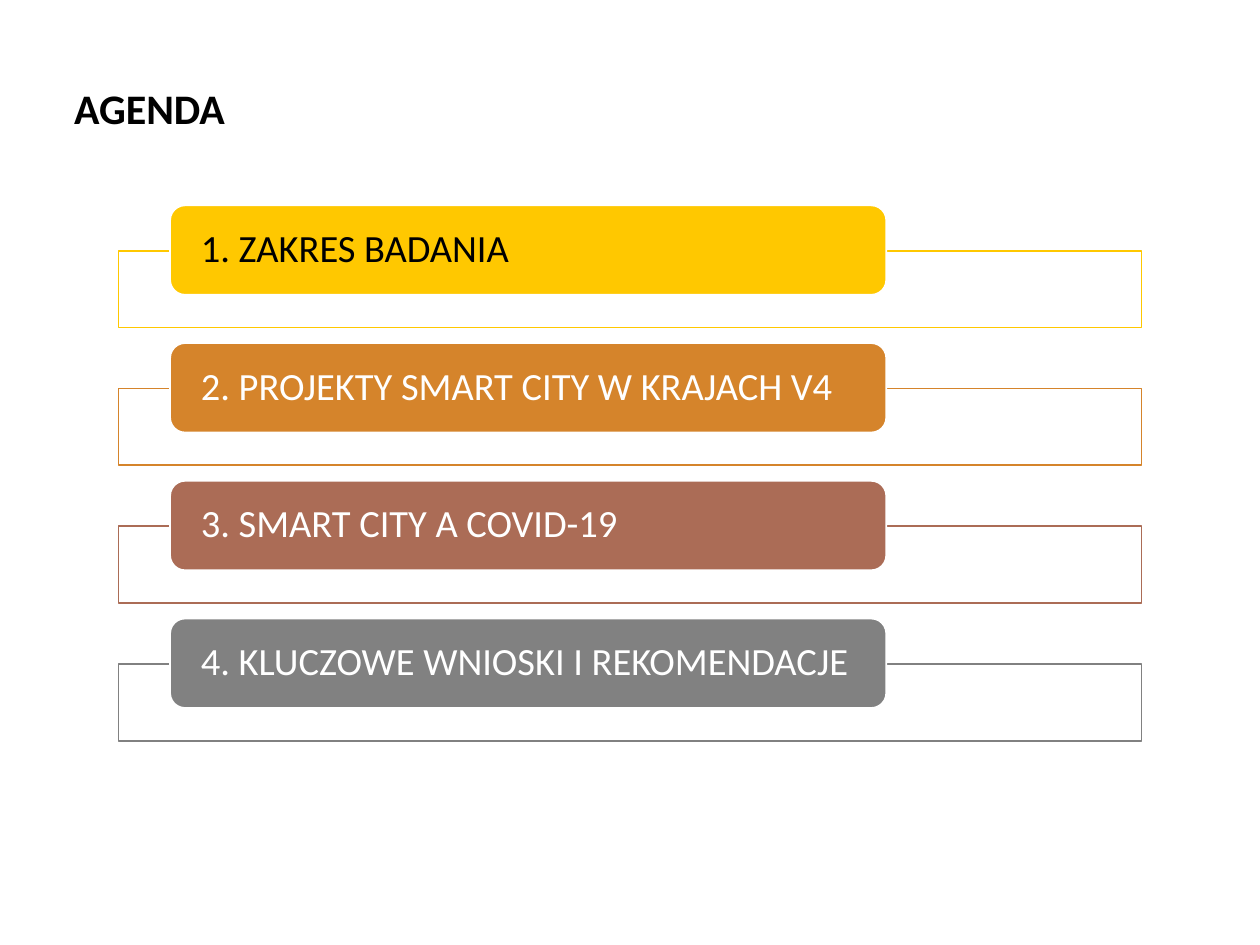
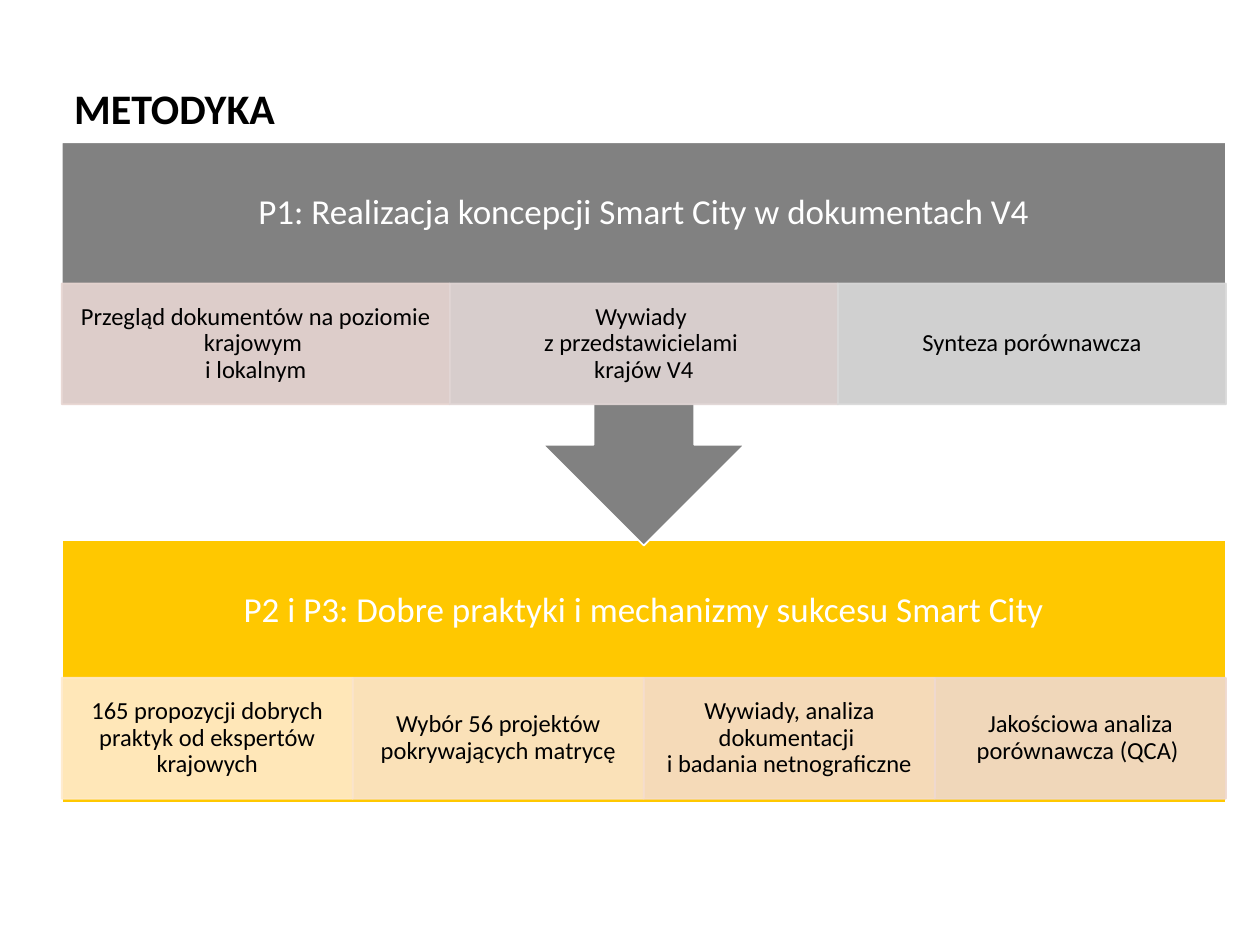
from lxml.etree import SubElement
from pptx import Presentation
from pptx.dml.color import RGBColor
from pptx.enum.shapes import MSO_SHAPE
from pptx.enum.text import MSO_ANCHOR, PP_ALIGN
from pptx.oxml.ns import qn
from pptx.util import Inches, Pt

FONT = "Calibri"
BLACK = RGBColor(0, 0, 0)
WHITE = RGBColor(255, 255, 255)
GOLD = RGBColor(0xFF, 0xC8, 0x00)
AMBER = RGBColor(0xD5, 0x84, 0x2B)
CLAY = RGBColor(0xAB, 0x6C, 0x56)
GRAY = RGBColor(0x81, 0x81, 0x81)
CREAM = RGBColor(0xFF, 0xEB, 0xCC)
SAND = RGBColor(0xFA, 0xE4, 0xCC)
PEACH = RGBColor(0xF5, 0xDD, 0xCD)
BLUSH = RGBColor(0xEF, 0xD9, 0xCF)
ROSE = RGBColor(0xE8, 0xD6, 0xD2)
MAUVE = RGBColor(0xE1, 0xD6, 0xD5)
SILVER = RGBColor(0xD9, 0xD9, 0xD9)

LEFT, WIDTH = 0.49, 9.24

TOPICS = [
    ("1. ZAKRES BADANIA", GOLD, BLACK),
    ("2. PROJEKTY SMART CITY W KRAJACH V4", AMBER, WHITE),
    ("3. SMART CITY A COVID-19", CLAY, WHITE),
    ("4. KLUCZOWE WNIOSKI I REKOMENDACJE", GRAY, WHITE),
]
REVIEW = [
    ("Przegląd dokumentów na poziomie krajowym \ni lokalnym", ROSE),
    ("Wywiady \nz przedstawicielami \nkrajów V4", MAUVE),
    ("Synteza porównawcza", SILVER),
]
CASES = [
    ("165 propozycji dobrych praktyk od ekspertów krajowych", CREAM),
    ("Wybór 56 projektów pokrywających matrycę", SAND),
    ("Wywiady, analiza dokumentacji \ni badania netnograficzne", PEACH),
    ("Jakościowa analiza porównawcza (QCA) ", BLUSH),
]


def write(shape, text, size, color=BLACK, bold=False, align=PP_ALIGN.LEFT,
          anchor=MSO_ANCHOR.MIDDLE, space=0.9, pad=(0.1, 0.05)):
    frame = shape.text_frame
    frame.word_wrap = True
    frame.vertical_anchor = anchor
    frame.margin_left = frame.margin_right = Inches(pad[0])
    frame.margin_top = frame.margin_bottom = Inches(pad[1])
    para = frame.paragraphs[0]
    para.text = text
    para.alignment = align
    para.line_spacing = space
    for run in para.runs:
        run.font.name = FONT
        run.font.size = Pt(size)
        run.font.bold = bold
        run.font.color.rgb = color
    for brk in para._p.findall(qn("a:br")):
        SubElement(brk, qn("a:rPr"), sz=str(size * 100))


def place(box):
    return [Inches(side) for side in box]


def label(slide, box, text, size, **style):
    write(slide.shapes.add_textbox(*place(box)), text, size, **style)


def block(slide, kind, box, fill, line=WHITE):
    shape = slide.shapes.add_shape(kind, *place(box))
    shape.shadow.inherit = False
    shape.fill.solid()
    shape.fill.fore_color.rgb = fill
    shape.line.color.rgb = line
    shape.line.width = Pt(1)
    return shape


def fade(shape):
    for color in shape._element.spPr.iter(qn("a:srgbClr")):
        SubElement(color, qn("a:alpha"), val="90000")


def start(deck, title):
    slide = deck.slides.add_slide(deck.slide_layouts[6])
    label(slide, (LEFT, 0.55, WIDTH, 0.51), title, 24, bold=True,
          anchor=MSO_ANCHOR.TOP, space=1.13)
    return slide


def topic(slide, box, text, fill, ink):
    left, top, width, height = box
    block(slide, MSO_SHAPE.RECTANGLE, (left, top + 0.36, width, height - 0.36),
          WHITE, fill)
    tab = block(slide, MSO_SHAPE.ROUNDED_RECTANGLE,
                (left + 0.41, top, width * 0.7, 0.71), fill)
    write(tab, text, 22, color=ink, pad=(0.21, 0))


def stage(slide, box, kind, turn, fill, head, gap, steps):
    left, top, width, height = box
    back = block(slide, kind, box, fill)
    back.rotation = turn
    label(slide, (left, top, width, 1.12), head, 20, color=WHITE,
          align=PP_ALIGN.CENTER, pad=(0.16, 0.16))
    wide = width / len(steps)
    for i, (text, tint) in enumerate(steps):
        cell = block(slide, MSO_SHAPE.RECTANGLE,
                     (left + i * wide, top + gap, wide, 0.96), tint, tint)
        fade(cell)
        write(cell, text, 14, align=PP_ALIGN.CENTER, pad=(0.11, 0.02))


def agenda(deck):
    slide = start(deck, "AGENDA")
    for i, (text, fill, ink) in enumerate(TOPICS):
        topic(slide, (0.94, 1.63 + i * 1.093, 8.12, 0.97), text, fill, ink)


def method(deck):
    slide = start(deck, "METODYKA")
    stage(slide, (LEFT, 4.29, WIDTH, 2.08), MSO_SHAPE.RECTANGLE, 0, GOLD,
          "P2 i P3: Dobre praktyki i mechanizmy sukcesu Smart City", 1.09, CASES)
    stage(slide, (LEFT, 1.13, WIDTH, 3.2), MSO_SHAPE.UP_ARROW_CALLOUT, 180, GRAY,
          "P1: Realizacja koncepcji Smart City w dokumentach V4", 1.12, REVIEW)


def main():
    deck = Presentation()
    deck.slide_width = Inches(10)
    deck.slide_height = Inches(7.5)
    agenda(deck)
    method(deck)
    deck.save("out.pptx")


if __name__ == "__main__":
    main()
